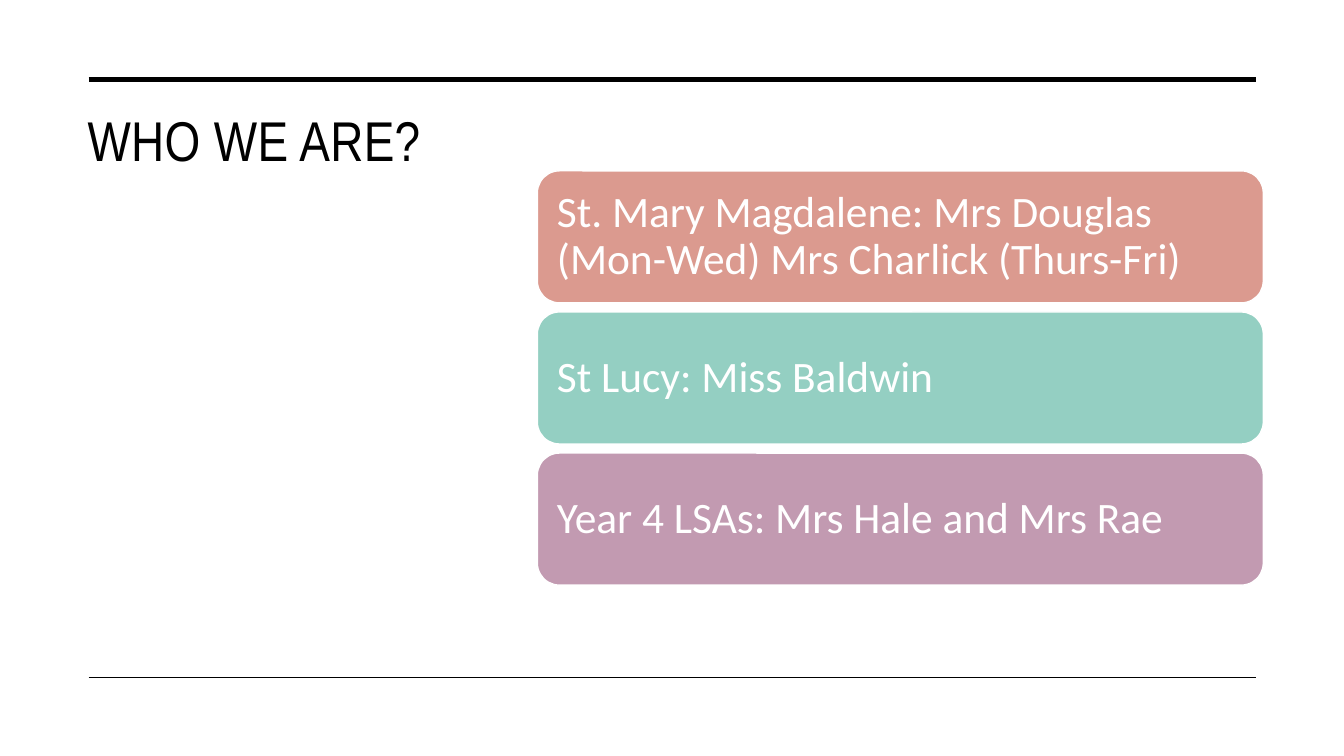
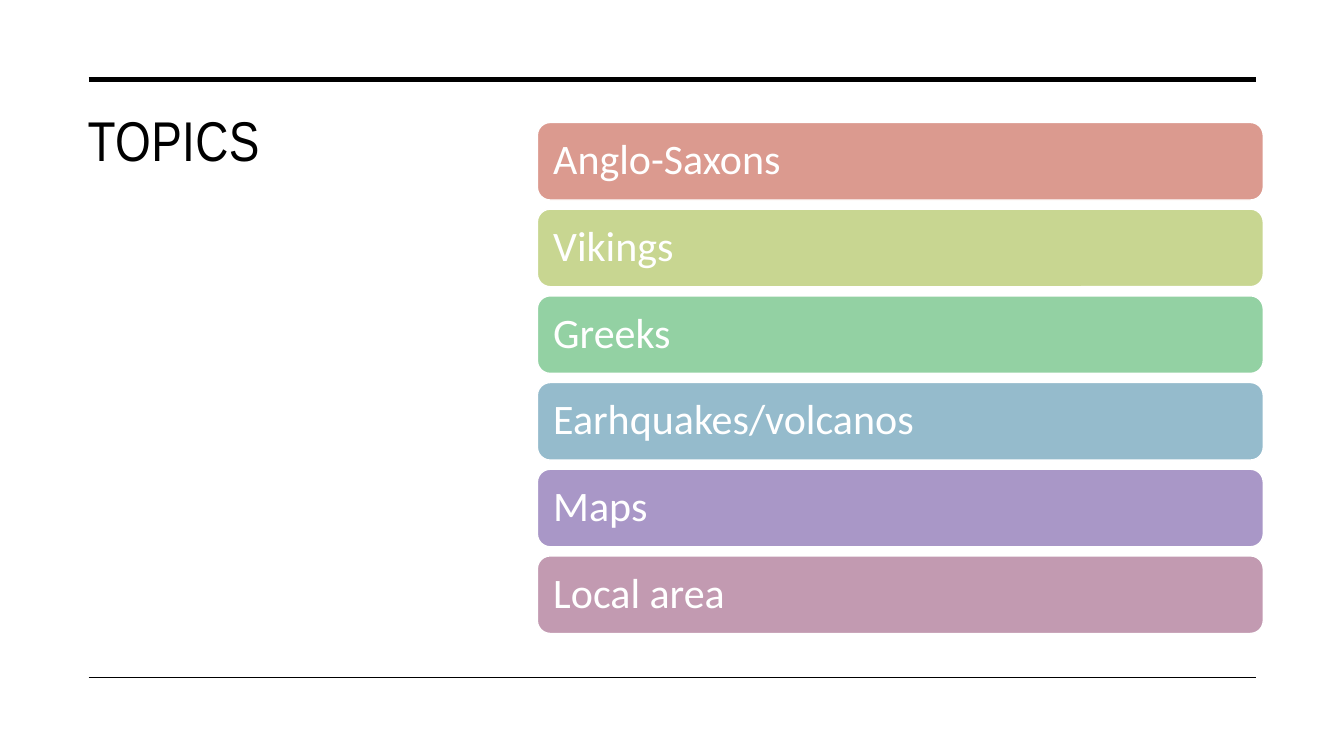
from dataclasses import dataclass
from typing import Any

from lxml import etree
from pptx import Presentation
from pptx import util as u
from pptx.dml.color import RGBColor
from pptx.enum import shapes, text
from pptx.oxml.ns import qn


# Shared look
@dataclass(frozen=True)
class Theme:
    black: str = "000000"
    white: str = "FFFFFF"
    coral: str = "DB9A8F"
    lime: str = "C8D691"
    green: str = "93D1A3"
    teal: str = "94CFC2"
    blue: str = "95BBCC"
    violet: str = "A997C7"
    mauve: str = "C29AB1"
    title_font: str = "Arial Narrow"
    body_font: str = "Calibri"
    title_size: float = 40
    title_spacing: float = 0.3


@dataclass(frozen=True)
class Rule:
    y: float
    weight: float


@dataclass(frozen=True)
class Card:
    label: str
    color: str


@dataclass(frozen=True)
class CardSlide:
    title: str
    cards: tuple[Card, ...]
    card_height: float
    text_size: float
    inset: float


T = Theme()
SLIDE_W, SLIDE_H = 13.33, 7.5
RULE_LEFT, RULE_RIGHT = 0.88, 12.46
RULES = (Rule(0.79, 3.5), Rule(6.72, 1))
CARD_LEFT, CARD_W, CARD_GAP = 5.33, 7.2, 0.09

# Slide content
SLIDES = (
    CardSlide("WHO WE ARE?", (
        Card("St. Mary Magdalene: Mrs Douglas (Mon-Wed) Mrs Charlick (Thurs-Fri)", T.coral),
        Card("St Lucy: Miss Baldwin", T.teal),
        Card("Year 4 LSAs: Mrs Hale and Mrs Rae", T.mauve),
    ), card_height=1.31, text_size=31, inset=0.13),
    CardSlide("TOPICS", (
        Card("Anglo-Saxons", T.coral),
        Card("Vikings", T.lime),
        Card("Greeks", T.green),
        Card("Earhquakes/volcanos", T.blue),
        Card("Maps", T.violet),
        Card("Local area", T.mauve),
    ), card_height=0.77, text_size=30, inset=0.12),
)


def rgb(color: str) -> RGBColor:
    return RGBColor.from_string(color)


def apply(target: Any, formats: dict[str, Any]) -> None:
    for name, value in formats.items():
        setattr(target, name, value)


def add_run(p: Any, label: str, font: str, size: float, color: str) -> Any:
    r = p.add_run()
    r.text = label
    apply(r.font, {"name": font, "size": u.Pt(size)})
    r.font.color.rgb = rgb(color)
    return r


# Title and the two rules, the same on every slide
def add_frame(s: Any, title: str) -> None:
    box = s.shapes.add_textbox(u.Inches(0.77), u.Inches(1), u.Inches(4), u.Inches(4.82))
    tf = box.text_frame
    tf.word_wrap = True
    r = add_run(tf.paragraphs[0], title, T.title_font, T.title_size, T.black)
    r.font._element.set("spc", str(round(T.title_spacing * 100)))
    for rule in RULES:
        y = u.Inches(rule.y)
        line = s.shapes.add_connector(shapes.MSO_CONNECTOR.STRAIGHT,
                                      u.Inches(RULE_LEFT), y, u.Inches(RULE_RIGHT), y)
        line.line.color.rgb = rgb(T.black)
        line.line.width = u.Pt(rule.weight)
        etree.SubElement(line._element.spPr, qn("a:effectLst"))


# Stack of cards, centred on the slide's height
def add_cards(s: Any, content: CardSlide) -> None:
    pitch = content.card_height + CARD_GAP
    top = (SLIDE_H - len(content.cards) * pitch + CARD_GAP) / 2
    inset = u.Inches(content.inset)
    for i, card in enumerate(content.cards):
        sp = s.shapes.add_shape(shapes.MSO_SHAPE.ROUNDED_RECTANGLE,
                                u.Inches(CARD_LEFT), u.Inches(top + i * pitch),
                                u.Inches(CARD_W), u.Inches(content.card_height))
        sp.shadow.inherit = False
        sp.fill.solid()
        sp.fill.fore_color.rgb = rgb(card.color)
        sp.line.color.rgb = rgb(T.white)
        sp.line.width = u.Pt(1)
        tf = sp.text_frame
        apply(tf, {"word_wrap": True, "vertical_anchor": text.MSO_ANCHOR.MIDDLE,
                   "margin_left": inset, "margin_right": inset,
                   "margin_top": inset, "margin_bottom": inset})
        p = tf.paragraphs[0]
        apply(p, {"alignment": text.PP_ALIGN.LEFT, "line_spacing": 0.9})
        add_run(p, card.label, T.body_font, content.text_size, T.white)


def main() -> None:
    prs = Presentation()
    apply(prs, {"slide_width": u.Inches(SLIDE_W), "slide_height": u.Inches(SLIDE_H)})
    for content in SLIDES:
        s = prs.slides.add_slide(prs.slide_layouts[6])
        add_frame(s, content.title)
        add_cards(s, content)
    prs.save("out.pptx")


if __name__ == "__main__":
    main()
